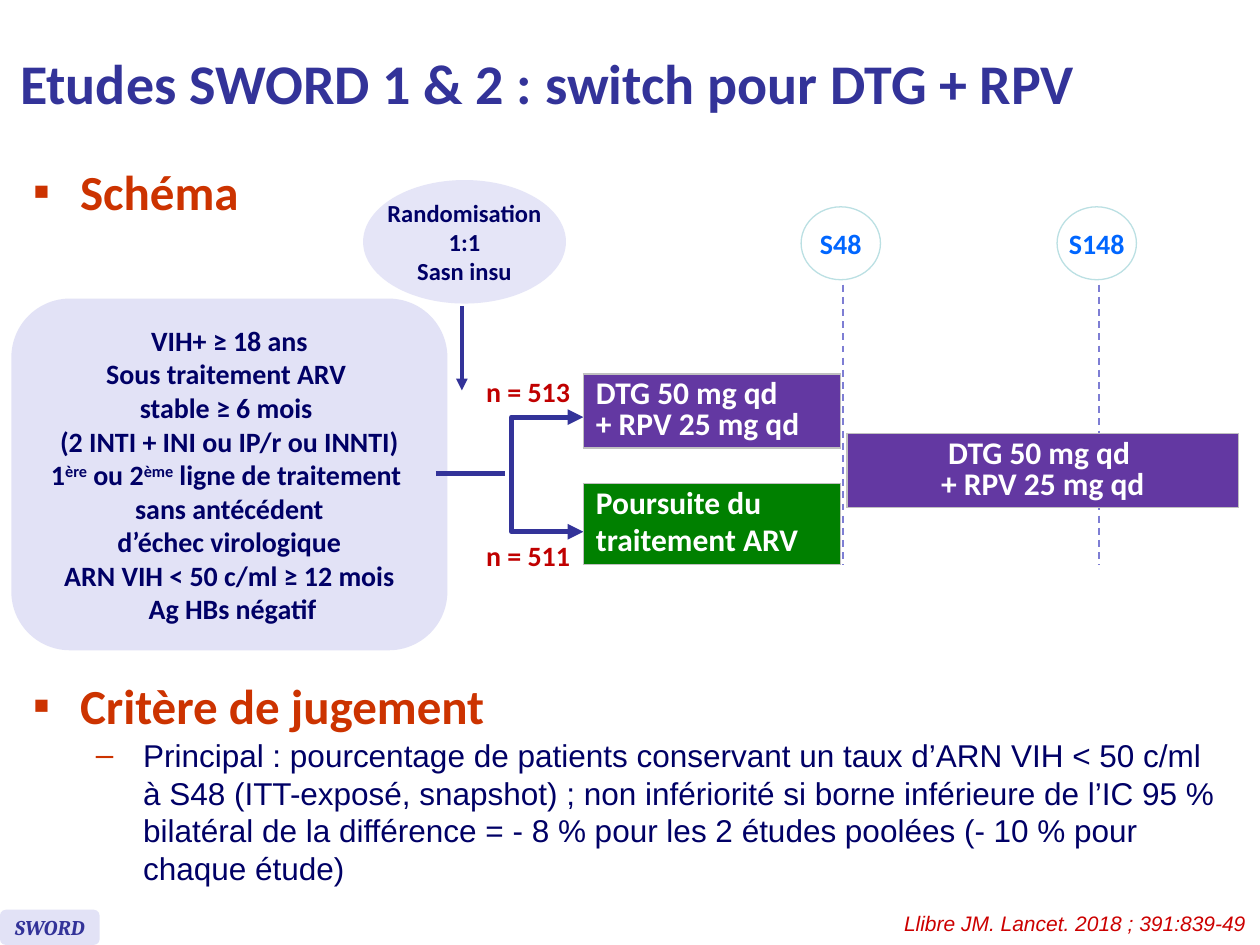
"""Build the SWORD 1 & 2 study design slide."""
from lxml import etree
from pptx import Presentation
from pptx.dml.color import RGBColor
from pptx.enum.dml import MSO_LINE
from pptx.enum.shapes import MSO_CONNECTOR, MSO_SHAPE
from pptx.enum.text import MSO_ANCHOR, MSO_AUTO_SIZE, PP_ALIGN
from pptx.oxml.ns import qn
from pptx.util import Cm, Pt

LEFT, CENTER, RIGHT = PP_ALIGN.LEFT, PP_ALIGN.CENTER, PP_ALIGN.RIGHT
MIDDLE, TOP = MSO_ANCHOR.MIDDLE, MSO_ANCHOR.TOP
ELLIPSE, ROUNDED = MSO_SHAPE.OVAL, MSO_SHAPE.ROUNDED_RECTANGLE
STRAIGHT = MSO_CONNECTOR.STRAIGHT
DASH = MSO_LINE.DASH

INDIGO = RGBColor(0x33, 0x33, 0x99)
NAVY = RGBColor(0x00, 0x00, 0x66)
RUST = RGBColor(0xCC, 0x33, 0x00)
CRIMSON = RGBColor(0xC0, 0x00, 0x00)
RED = RGBColor(0xCC, 0x00, 0x00)
BLUE = RGBColor(0x00, 0x66, 0xFF)
PURPLE = RGBColor(0x63, 0x38, 0xA2)
GREEN = RGBColor(0x00, 0x80, 0x00)
LAVENDER = RGBColor(0xE2, 0xE2, 0xF6)
PALE_LAVENDER = RGBColor(0xE5, 0xE5, 0xF7)
DASH_VIOLET = RGBColor(0x7E, 0x7E, 0xD4)
AQUA = RGBColor(0xBB, 0xE0, 0xE3)
WHITE = RGBColor(0xFF, 0xFF, 0xFF)


def write(frame, lines, size, color, font="Calibri", bold=True, italic=False,
          align=CENTER, anchor=MIDDLE, wrap=False):
    """Fill a text frame; parts between carets become superscript."""
    frame.text = "\n".join(line.replace("^", "") for line in lines)
    frame.word_wrap = wrap
    frame.auto_size = MSO_AUTO_SIZE.NONE
    frame.vertical_anchor = anchor
    for paragraph, line in zip(frame.paragraphs, lines):
        paragraph.alignment = align
        if "^" in line:
            paragraph.text = ""
            for position, part in enumerate(line.split("^")):
                run = paragraph.add_run()
                run.text = part
                if position % 2:
                    run.font._element.set("baseline", "30000")
        for run in paragraph.runs:
            run.font.name, run.font.size = font, Pt(size)
            run.font.bold, run.font.italic = bold, italic
            run.font.color.rgb = color


def stroke(outline, color, width, dash=None, ends=()):
    """Style a line or open path, with triangles on the given ends."""
    outline.line.color.rgb = color
    outline.line.width = Pt(width)
    if dash:
        outline.line.dash_style = dash
    for end in ends:
        etree.SubElement(outline.line._get_or_add_ln(), qn(f"a:{end}"), type="triangle")
    if outline._element.spPr.find(qn("a:effectLst")) is None:
        etree.SubElement(outline._element.spPr, qn("a:effectLst"))


prs = Presentation()
prs.slide_width, prs.slide_height = Cm(25.4), Cm(19.05)
slide = prs.slides.add_slide(prs.slide_layouts[3])
shapes = slide.shapes
title, schema, criterion = slide.placeholders

for placeholder, box in (
    (title, (0.15, 0.13, 22.76, 3.07)),
    (schema, (0.41, 3.12, 7.49, 1.6)),
    (criterion, (0.41, 13.49, 24.56, 4.6)),
):
    placeholder.left, placeholder.top, placeholder.width, placeholder.height = map(Cm, box)

write(title.text_frame, ["Etudes SWORD 1 & 2 : switch pour DTG + RPV"], 32, INDIGO,
      align=LEFT, wrap=True)
write(schema.text_frame, ["Schéma"], 28, RUST, align=LEFT, anchor=TOP, wrap=True)
write(criterion.text_frame, [
    "Critère de jugement",
    "Principal : pourcentage de patients conservant un taux d’ARN VIH < 50 c/ml "
    "à S48 (ITT-exposé, snapshot) ; non infériorité si borne inférieure de l’IC 95 % "
    "bilatéral de la différence = - 8 % pour les 2 études poolées (- 10 % pour chaque étude)",
], 28, RUST, align=LEFT, anchor=TOP, wrap=True)

heading, detail = criterion.text_frame.paragraphs
for paragraph, level, indent, bullet in (
    (schema.text_frame.paragraphs[0], 0, 0.95, "▪"),
    (heading, 0, 0.95, "▪"),
    (detail, 1, 2.22, "–"),
):
    paragraph.level = level
    paragraph.space_before = Pt(0.8 * level)
    properties = paragraph._p.get_or_add_pPr()
    properties.set("marL", str(Cm(indent)))
    properties.set("indent", str(Cm(-0.95)))
    bullet_color = etree.SubElement(properties, qn("a:buClr"))
    etree.SubElement(bullet_color, qn("a:srgbClr"), val=str(RUST))
    etree.SubElement(properties, qn("a:buFont"), typeface="Arial")
    etree.SubElement(properties, qn("a:buChar"), char=bullet)
detail_font = detail.runs[0].font
detail_font.name, detail_font.size, detail_font.bold = "Arial", Pt(18), False
detail_font.color.rgb = NAVY

eligibility = [
    "VIH+ ≥ 18 ans", "Sous traitement ARV ", "stable ≥ 6 mois ",
    "(2 INTI + INI ou IP/r ou INNTI)", "1^ère^ ou 2^ème^ ligne de traitement ",
    "sans antécédent", "d’échec virologique", "ARN VIH < 50 c/ml ≥ 12 mois",
    " Ag HBs négatif",
]
for kind, box, fill, border, lines, size, color, font in (
    (ROUNDED, (0, 18.34, 2.01, 0.71), LAVENDER, None, ["SWORD"], 12, INDIGO, "Cambria"),
    (ELLIPSE, (7.32, 3.63, 4.09, 2.49), PALE_LAVENDER, None,
     ["Randomisation", "1:1", "Sasn insu"], 14, NAVY, "Calibri"),
    (ROUNDED, (0.23, 6.02, 8.79, 7.09), LAVENDER, None, eligibility, 16, NAVY, "Calibri"),
    (ELLIPSE, (16.15, 4.17, 1.6, 1.47), WHITE, AQUA, ["S48"], 16, BLUE, "Calibri"),
    (ELLIPSE, (21.31, 4.17, 1.6, 1.47), WHITE, AQUA, ["S148"], 16, BLUE, "Calibri"),
):
    node = shapes.add_shape(kind, *map(Cm, box))
    node.shadow.inherit = False
    node.fill.solid()
    node.fill.fore_color.rgb = fill
    if border:
        node.line.color.rgb = border
        node.line.width = Pt(0.75)
    else:
        node.line.fill.background()
    write(node.text_frame, lines, size, color, font, italic=font == "Cambria")

for start, finish, color, width, dash, ends in (
    ((9.31, 6.17), (9.31, 7.87), INDIGO, 2.25, None, ["tailEnd"]),
    ((8.79, 9.55), (10.19, 9.55), INDIGO, 3, None, []),
    ((16.99, 5.74), (16.99, 11.38), DASH_VIOLET, 1, DASH, []),
    ((22.15, 5.74), (22.15, 11.38), DASH_VIOLET, 1, DASH, []),
):
    connector = shapes.add_connector(STRAIGHT, *map(Cm, start + finish))
    stroke(connector, color, width, dash, ends)

fork_path = shapes.build_freeform(Cm(11.76), Cm(8.41))
fork_path.add_line_segments(
    [(Cm(10.31), Cm(8.41)), (Cm(10.31), Cm(10.72)), (Cm(11.76), Cm(10.72))], close=False)
fork = fork_path.convert_to_shape()
fork.fill.background()
stroke(fork, INDIGO, 3, ends=["headEnd", "tailEnd"])

dual_therapy = ["DTG 50 mg qd \v+ RPV 25 mg qd"]
for box, fill, lines, align in (
    ((11.76, 7.54, 5.18, 1.47), PURPLE, dual_therapy, LEFT),
    ((11.76, 9.75, 5.18, 1.63), GREEN, ["Poursuite du", "traitement ARV"], LEFT),
    ((17.07, 8.74, 7.9, 1.47), PURPLE, dual_therapy, CENTER),
):
    arm = shapes.add_table(1, 1, *map(Cm, box)).table
    arm.first_row = arm.horz_banding = False
    cell = arm.cell(0, 0)
    write(cell.text_frame, lines, 18, WHITE, align=align, wrap=True)
    cell.vertical_anchor = MIDDLE
    for position, paragraph in enumerate(cell.text_frame.paragraphs):
        paragraph.line_spacing = 0.8
        paragraph.space_before = Pt(3.6 * position)
    cell_properties = cell._tc.get_or_add_tcPr()
    for side in ("lnL", "lnR", "lnT", "lnB"):
        edge = etree.SubElement(cell_properties, qn(f"a:{side}"), w=str(Pt(1)))
        edge_fill = etree.SubElement(edge, qn("a:solidFill"))
        etree.SubElement(edge_fill, qn("a:srgbClr"), val="C0C0C0")
    cell.fill.solid()
    cell.fill.fore_color.rgb = fill

for box, caption, size, color, font, align in (
    ((9.5, 10.74, 2.29, 0.94), "n = 511", 16, CRIMSON, "Calibri", CENTER),
    ((9.5, 7.42, 2.29, 0.94), "n = 513", 16, CRIMSON, "Calibri", CENTER),
    ((17.93, 18.24, 7.44, 0.76), "Llibre JM. Lancet. 2018 ; 391:839-49", 12, RED, "Arial", RIGHT),
):
    label = shapes.add_textbox(*map(Cm, box))
    write(label.text_frame, [caption], size, color, font, bold=font == "Calibri",
          italic=font == "Arial", align=align, anchor=TOP)

prs.save("out.pptx")
